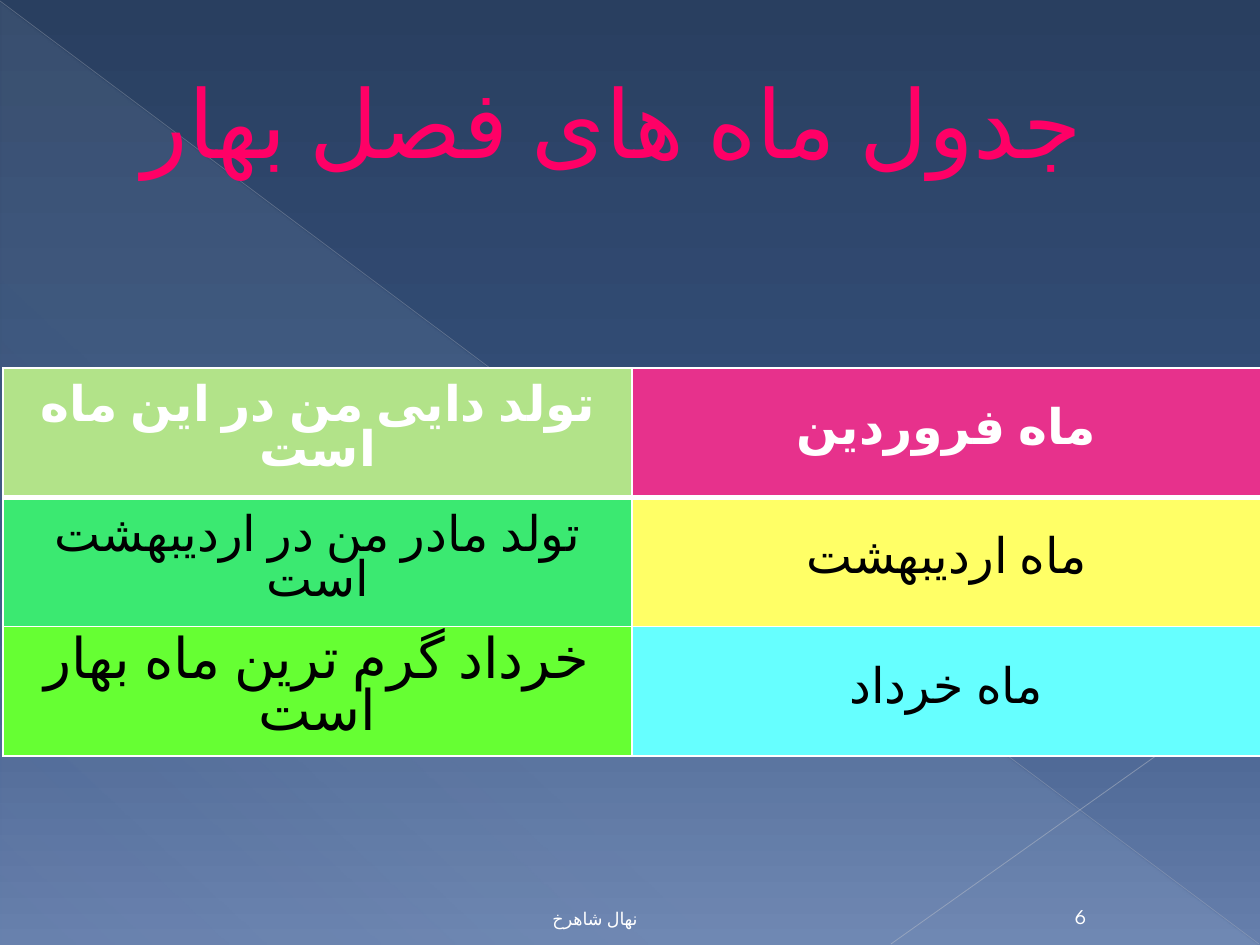
from lxml import etree
from pptx import Presentation
from pptx.dml.color import RGBColor
from pptx.enum.lang import MSO_LANGUAGE_ID
from pptx.enum.shapes import MSO_CONNECTOR, MSO_SHAPE
from pptx.enum.text import MSO_ANCHOR, MSO_AUTO_SIZE, PP_ALIGN
from pptx.oxml.ns import qn
from pptx.util import Emu, Pt

LEFT, CENTER, RIGHT = PP_ALIGN.LEFT, PP_ALIGN.CENTER, PP_ALIGN.RIGHT
MIDDLE, BOTTOM = MSO_ANCHOR.MIDDLE, MSO_ANCHOR.BOTTOM
STRAIGHT, TRIANGLE = MSO_CONNECTOR.STRAIGHT, MSO_SHAPE.RIGHT_TRIANGLE
PERSIAN = MSO_LANGUAGE_ID.FARSI
TITLE_ONLY = 5
PX_PER_INCH = 126
FONT = "League Spartan"

WHITE = RGBColor(0xFF, 0xFF, 0xFF)
BLACK = RGBColor(0x00, 0x00, 0x00)
PINK = RGBColor(0xFF, 0x00, 0x66)
OUTLINE = RGBColor(0x58, 0x91, 0x29)
NAVY = RGBColor(0x29, 0x3F, 0x60)
BLUE = RGBColor(0x37, 0x53, 0x80)
HAZE = RGBColor(0x66, 0x7F, 0xAC)
ICE = RGBColor(0xD6, 0xEC, 0xFF)
RAY = RGBColor(0xB7, 0xBC, 0xC5)
SHORT_RAY = RGBColor(0xBF, 0xC3, 0xCB)
PALE_GREEN = RGBColor(0xB2, 0xE3, 0x89)
MAGENTA = RGBColor(0xE7, 0x31, 0x8C)
GREEN = RGBColor(0x3B, 0xE9, 0x71)
YELLOW = RGBColor(0xFF, 0xFF, 0x66)
LIME = RGBColor(0x66, 0xFF, 0x33)
CYAN = RGBColor(0x66, 0xFF, 0xFF)

# Each cell: text, fill, size
MONTHS = [
    [("تولد دایی من در این ماه است", PALE_GREEN, 28), ("ماه فروردین", MAGENTA, 28)],
    [("تولد مادر من در اردیبهشت است", GREEN, 28), ("ماه اردیبهشت", YELLOW, 28)],
    [("خرداد گرم ترین ماه بهار است", LIME, 32), ("ماه خرداد", CYAN, 28)],
]


def px(*lengths):
    return [Emu(round(length * 914400 / PX_PER_INCH)) for length in lengths]


def add_color(parent, color, opacity=100):
    node = etree.SubElement(parent, qn("a:srgbClr"), val=str(color))
    if opacity < 100:
        etree.SubElement(node, qn("a:alpha"), val=str(opacity * 1000))


def set_gradient(fill, owner, stops, angle):
    fill.gradient()
    gradient = owner.find(".//" + qn("a:gradFill"))
    for child in list(gradient):
        gradient.remove(child)
    stop_list = etree.SubElement(gradient, qn("a:gsLst"))
    for position, color, opacity in stops:
        stop = etree.SubElement(stop_list, qn("a:gs"), pos=str(position * 1000))
        add_color(stop, color, opacity)
    etree.SubElement(gradient, qn("a:lin"), ang=str(angle * 60000), scaled="0")


def add_line(parent, tag, color, points, index):
    line = etree.Element(qn(tag), w=str(Pt(points)))
    add_color(etree.SubElement(line, qn("a:solidFill")), color)
    parent.insert(index, line)


def write(frame, text, size, color, align, bold=False):
    para = frame.paragraphs[0]
    para.alignment = align
    span = para.add_run()
    span.text = text
    font = span.font
    font.name, font.size, font.bold = FONT, Pt(size), bold
    font.language_id = PERSIAN
    font.color.rgb = color
    properties = span._r.get_or_add_rPr()
    etree.SubElement(properties, qn("a:cs"), typeface=FONT)
    return para, properties


def add_ray(page, ends, color, points, opacity):
    ray = page.shapes.add_connector(STRAIGHT, *px(*ends))
    ray.line.width = Pt(points)
    ray.line.color.rgb = color
    shape_properties = ray._element.spPr
    node = shape_properties.find(".//" + qn("a:srgbClr"))
    etree.SubElement(node, qn("a:alpha"), val=str(opacity * 1000))
    etree.SubElement(shape_properties, qn("a:effectLst"))


def add_backdrop(page, left, top, width, height):
    set_gradient(page.background.fill, page.element,
                 [(0, NAVY, 100), (60, BLUE, 100), (100, HAZE, 100)], 90)
    wedge = page.shapes.add_shape(
        TRIANGLE, *px(left + 1, top + 3, width - 3, height - 3))
    wedge.shadow.inherit = False
    wedge.line.fill.background()
    set_gradient(wedge.fill, wedge._element.spPr,
                 [(0, ICE, 10), (70, ICE, 8), (100, ICE, 1)], 133)
    right, bottom = left + width - 1, top + height - 1
    add_ray(page, (left, top + 1, right, bottom), RAY, 0.39, 35)
    add_ray(page, (right + 1, top + 682, left + 891, bottom), SHORT_RAY, 0.47, 45)


def add_title(page, *box):
    title = page.shapes.title
    page.shapes.element.append(title.element)  # in front of the backdrop
    title.left, title.top, title.width, title.height = px(*box)
    frame = title.text_frame
    frame.auto_size = MSO_AUTO_SIZE.NONE
    frame.vertical_anchor = MIDDLE
    para, properties = write(frame, "جدول ماه های فصل بهار", 54, PINK, LEFT)
    para._p.get_or_add_pPr().set("marL", str(px(67)[0]))
    add_line(properties, "a:ln", OUTLINE, 0.5, 0)


def add_months(page, left, top, width, height):
    table = page.shapes.add_table(
        len(MONTHS), 2, *px(left, top, width, height)).table
    for r, row in enumerate(MONTHS):
        header = r == 0
        for c, (text, fill, size) in enumerate(row):
            cell = table.cell(r, c)
            cell.vertical_anchor = MIDDLE
            cell.fill.solid()
            cell.fill.fore_color.rgb = fill
            write(cell.text_frame, text, size, WHITE if header else BLACK, CENTER, header)
            # The header is set off by a thicker rule
            widths = {"L": 1, "R": 1, "T": 3 if r == 1 else 1, "B": 3 if header else 1}
            for index, (side, points) in enumerate(widths.items()):
                add_line(cell._tc.get_or_add_tcPr(), "a:ln" + side, WHITE, points, index)


def add_footer(page, box, text, size, align):
    footer = page.shapes.add_textbox(*px(*box))
    frame = footer.text_frame
    frame.word_wrap = True
    frame.vertical_anchor = BOTTOM
    write(frame, text, size, WHITE, align)


def main():
    deck = Presentation()
    deck.slide_width, deck.slide_height = px(1260, 945)
    page = deck.slides.add_slide(deck.slide_layouts[TITLE_ONLY])
    add_backdrop(page, 0, 0, 1260, 945)
    add_title(page, 63, 42, 1134, 158)
    add_months(page, 3, 368, 1258, 388)
    add_footer(page, (63, 893, 587, 42), "نهال شاهرخ", 10, RIGHT)
    add_footer(page, (1046, 893, 69, 42), "6", 12, CENTER)
    deck.save("out.pptx")


if __name__ == "__main__":
    main()
